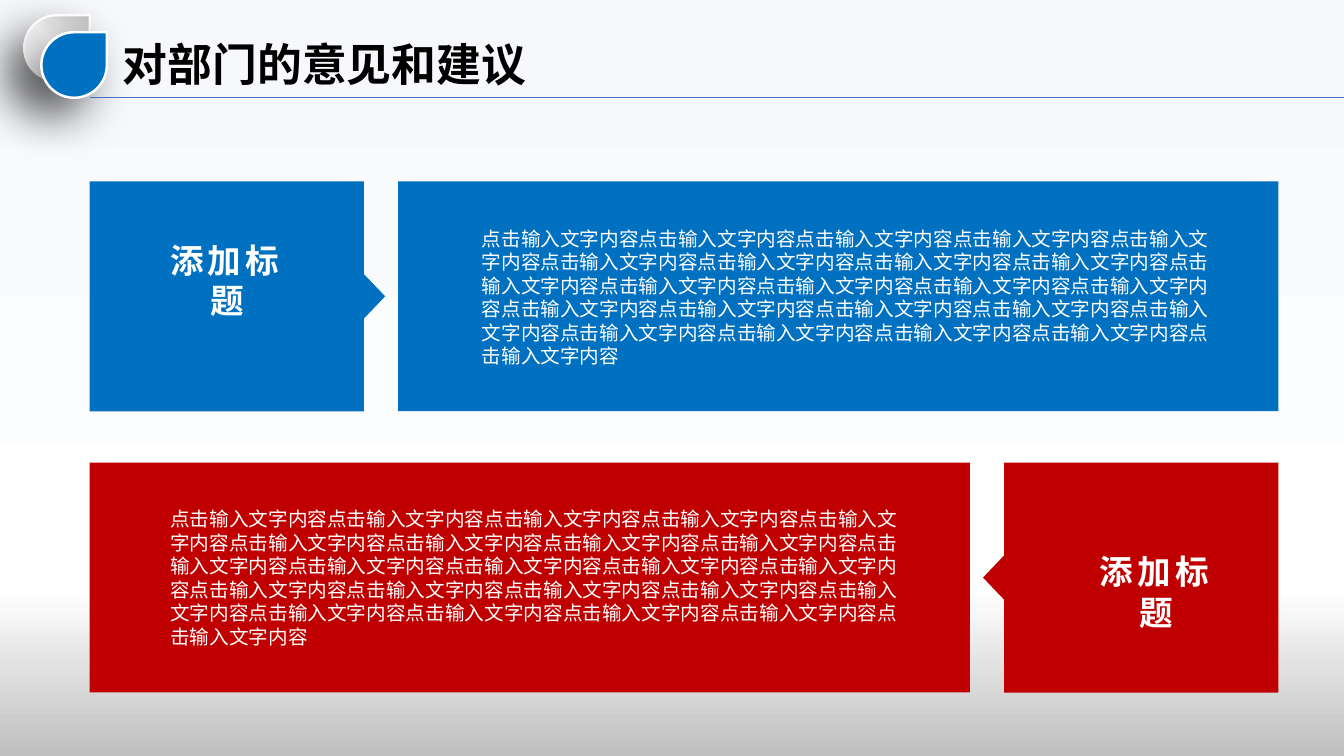
from lxml import etree
from pptx import Presentation
from pptx.dml.color import RGBColor
from pptx.enum.shapes import MSO_CONNECTOR, MSO_SHAPE
from pptx.enum.text import MSO_AUTO_SIZE, PP_ALIGN
from pptx.oxml import parse_xml
from pptx.oxml.ns import nsdecls, qn
from pptx.util import Inches, Pt

RECT, TEARDROP = MSO_SHAPE.RECTANGLE, MSO_SHAPE.TEAR
STRAIGHT = MSO_CONNECTOR.STRAIGHT
LEFT, CENTER = PP_ALIGN.LEFT, PP_ALIGN.CENTER
GROW = MSO_AUTO_SIZE.SHAPE_TO_FIT_TEXT
FONT = "Noto Sans CJK SC"
BLUE, RED, WHITE = "0070C0", "C00000", "FFFFFF"
BODY = "点击输入文字内容" * 24
rgb = RGBColor.from_string


def set_gradient(fill, element, stops, angle):
    """Fill with (position, colour) stops; the angle runs clockwise."""
    fill.gradient()
    fill.gradient_angle = 360 - angle
    gs_list = element.find(".//" + qn("a:gsLst"))
    for gs in list(gs_list):
        gs_list.remove(gs)
    for position, color in stops:
        gs = etree.SubElement(gs_list, qn("a:gs"), pos=str(position * 1000))
        etree.SubElement(gs, qn("a:srgbClr"), val=color)


def add_text(box, text, size, color, bold=False, align=LEFT, margins=None, spacing=0):
    sp = slide.shapes.add_textbox(*map(Inches, box))
    tf = sp.text_frame
    tf.word_wrap = True
    tf.auto_size = GROW
    if margins is not None:
        tf.margin_left = tf.margin_right = Inches(margins)
        tf.margin_top = tf.margin_bottom = Inches(margins)
    p = tf.paragraphs[0]
    p.text = text
    p.alignment = align
    font = p.runs[0].font
    font.name, font.size, font.bold = FONT, Pt(size), bold
    font.color.rgb = rgb(color)
    r_pr = font._element
    etree.SubElement(r_pr, qn("a:ea"), typeface=FONT)
    if spacing:
        r_pr.set("spc", str(spacing * 100))


prs = Presentation()
prs.slide_width, prs.slide_height = Inches(13.33), Inches(7.5)
slide = prs.slides.add_slide(prs.slide_layouts[6])
set_gradient(slide.background.fill, slide.element,
             [(0, "F6F8FC"), (78, WHITE), (100, "BFBFBF")], 90)

# Header: two overlapping drops, rule and title
for left, top, color in [(0.24, 0.15, None), (0.41, 0.32, BLUE)]:
    sp = slide.shapes.add_shape(TEARDROP, Inches(left), Inches(top),
                                Inches(0.65), Inches(0.65))
    if color:
        sp.fill.solid()
        sp.fill.fore_color.rgb = rgb(color)
    else:
        set_gradient(sp.fill, sp.element,
                     [(0, WHITE), (50, "F2F2F2"), (100, "BFBFBF")], 315)
    sp.line.color.rgb = rgb(WHITE)
    sp.line.width = Pt(1.75)
    sp.element.spPr.append(parse_xml(
        f'<a:effectLst {nsdecls("a")}><a:outerShdw blurRad="{Pt(35)}" '
        f'dist="{Pt(20)}" dir="{135 * 60000}" algn="tr" rotWithShape="0">'
        '<a:srgbClr val="000000"><a:alpha val="50000"/></a:srgbClr>'
        '</a:outerShdw></a:effectLst>'))

rule = slide.shapes.add_connector(STRAIGHT, Inches(0.89), Inches(0.97),
                                  Inches(13.33), Inches(0.97))
rule.line.color.rgb = rgb("4472C4")
rule.line.width = Pt(0.5)
etree.SubElement(rule.element.spPr, qn("a:effectLst"))
add_text((1.12, 0.32, 4.5, 0.64), "对部门的意见和建议", 32, "000000", bold=True)

# Rows: body panel, pointed label; edge is the label side that carries the point
PANEL_W, LABEL_W, ROW_H = 8.73, 2.72, 2.28
POINT_W, POINT_HALF = 0.21, 0.22
rows = [
    # top, colour, panel left, label edge, direction, label text, body text
    (1.8, BLUE, 3.95, 3.61, 1, (1.56, 2.38), (4.68, 2.2)),
    (4.59, RED, 0.89, 9.96, -1, (10.78, 5.47), (1.59, 4.98)),
]
for top, color, panel_left, edge, direction, label_at, body_at in rows:
    panel = slide.shapes.add_shape(RECT, Inches(panel_left), Inches(top),
                                   Inches(PANEL_W), Inches(ROW_H))
    far, bottom, middle = edge - direction * LABEL_W, top + ROW_H, top + ROW_H / 2
    outline = [(far, top), (edge, top), (edge, middle - POINT_HALF),
               (edge + direction * POINT_W, middle),
               (edge, middle + POINT_HALF), (edge, bottom), (far, bottom)]
    points = [(Inches(x), Inches(y)) for x, y in outline]
    builder = slide.shapes.build_freeform(*points[0])
    builder.add_line_segments(points[1:], close=True)
    for sp in (panel, builder.convert_to_shape()):
        sp.fill.solid()
        sp.fill.fore_color.rgb = rgb(color)
        sp.line.fill.background()
        sp.shadow.inherit = False
    add_text((*label_at, 1.38, 1.16), "添加标题", 24, WHITE, bold=True,
             align=CENTER, margins=0, spacing=3)
    add_text((*body_at, 7.48, 1.51), BODY, 14, WHITE)

prs.save("out.pptx")
